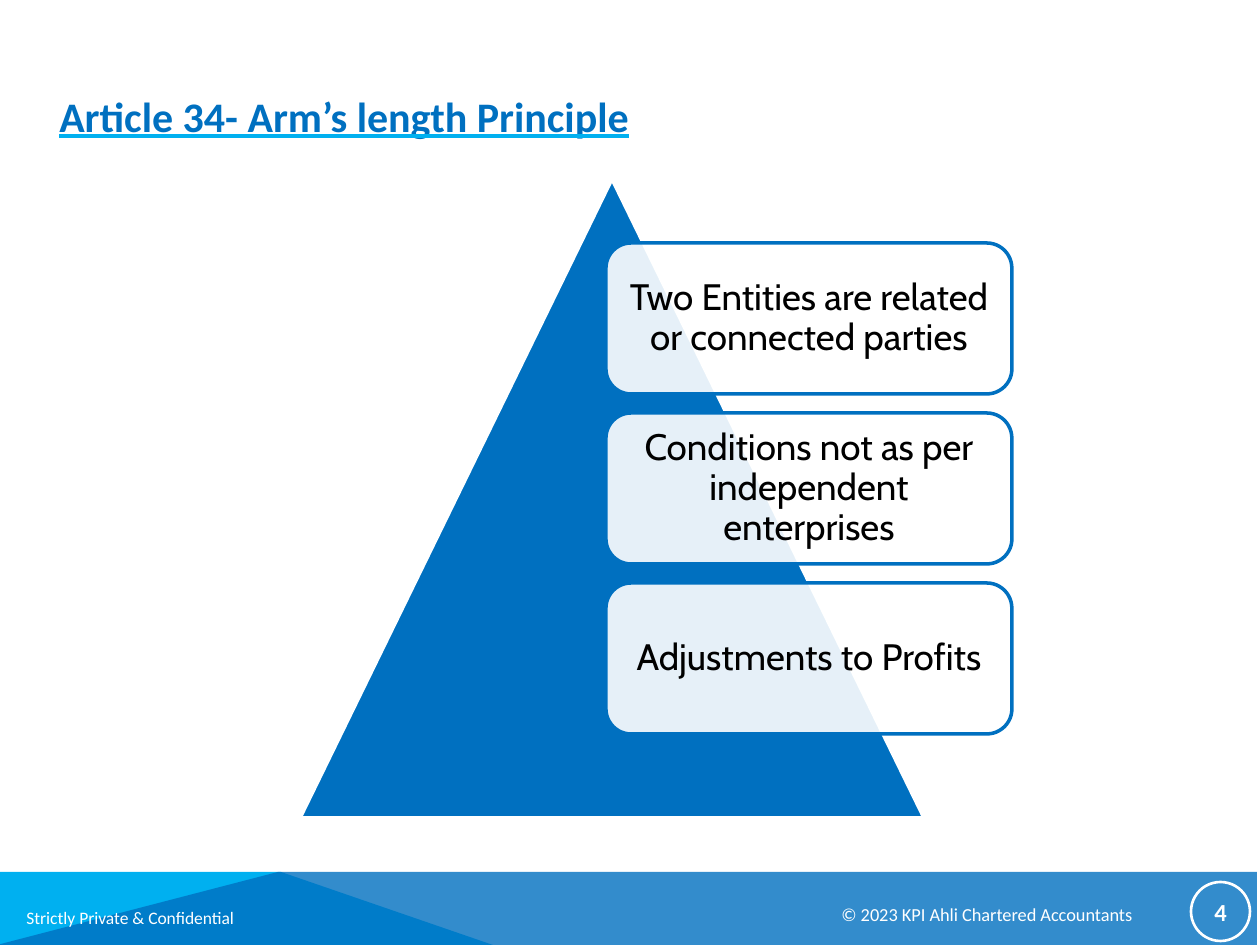
"""Build the slide on the arm's length principle."""
from lxml import etree
from pptx import Presentation
from pptx import util as u
from pptx.dml.color import RGBColor
from pptx.enum import shapes, text
from pptx.oxml.ns import qn

PX = u.Inches(1) / 126
BLUE = RGBColor(0x00, 0x70, 0xC0)
SKY = RGBColor(0x00, 0xB0, 0xF0)
WHITE = RGBColor(0xFF, 0xFF, 0xFF)
BLACK = RGBColor(0x00, 0x00, 0x00)

CONDITIONS = (
    "Two Entities are related or connected parties",
    "Conditions not as per independent enterprises",
    "Adjustments to Profits",
)
CONDITION_FORMAT = {"name": "Cabin", "size": u.Pt(21)}
TITLE_FORMAT = {"name": "Calibri", "size": u.Pt(24), "bold": True, "underline": True}
NUMBER_FORMAT = {"name": "Calibri", "size": u.Pt(14), "bold": True}


def px(*lengths):
    return [u.Emu(round(length * PX)) for length in lengths]


def paint(shape, fill=None, opacity=100, line=None, width=2):
    shape.shadow.inherit = False
    if fill is None:
        shape.fill.background()
    else:
        shape.fill.solid()
        shape.fill.fore_color.rgb = fill
        if opacity < 100:
            color = shape.fill._xPr.find(qn("a:solidFill"))[0]
            etree.SubElement(color, qn("a:alpha"), val=str(opacity * 1000))
    if line is None:
        shape.line.fill.background()
    else:
        shape.line.color.rgb = line
        shape.line.width = u.Pt(width)


def write(shape, words, font_format, color, inset=None, **paragraph_format):
    frame = shape.text_frame
    frame.word_wrap = True
    if inset is not None:
        frame.vertical_anchor = text.MSO_ANCHOR.MIDDLE
        for side in ("left", "top", "right", "bottom"):
            setattr(frame, f"margin_{side}", px(inset)[0])
    paragraph = frame.paragraphs[0]
    for name, value in paragraph_format.items():
        setattr(paragraph, name, value)
    run = paragraph.add_run()
    run.text = words
    for name, value in font_format.items():
        setattr(run.font, name, value)
    run.font.color.rgb = color
    return run


def add_band(slide, points, fill, opacity=100):
    builder = slide.shapes.build_freeform(*points[0], scale=PX)
    builder.add_line_segments(points[1:], close=True)
    paint(builder.convert_to_shape(), fill, opacity)


def add_shape(slide, kind, box, **colors):
    shape = slide.shapes.add_shape(kind, *px(*box))
    paint(shape, **colors)
    return shape


def add_label(slide, box, words, font_format, color):
    label = slide.shapes.add_textbox(*px(*box))
    return label, write(label, words, font_format, color)


def add_title(slide):
    title, run = add_label(slide, (47, 84, 1144, 63),
                           "Article 34- Arm’s length Principle", TITLE_FORMAT, BLUE)
    title.text_frame.auto_size = text.MSO_AUTO_SIZE.SHAPE_TO_FIT_TEXT
    underline = etree.Element(qn("a:uFill"))
    solid = etree.SubElement(underline, qn("a:solidFill"))
    etree.SubElement(solid, qn("a:srgbClr"), val=str(SKY))
    run.font._element.find(qn("a:latin")).addprevious(underline)


def add_footer(slide):
    add_band(slide, [(0, 945), (0, 872), (281, 872), (493, 945)], SKY)
    add_band(slide, [(-3, 945), (278, 872), (1257, 872), (1257, 945)], BLUE, 80)
    for box, words, size in (
        ((829, 897, 399, 42), "© 2023 KPI Ahli Chartered Accountants", 10.5),
        ((14, 901, 252, 38), "Strictly Private & Confidential", 10),
    ):
        add_label(slide, box, words, {"name": "Calibri", "size": u.Pt(size)}, WHITE)


def add_page_number(slide):
    circle = add_shape(slide, shapes.MSO_SHAPE.OVAL, (1191, 882, 59, 59),
                       line=WHITE, width=1.5)
    write(circle, "4", NUMBER_FORMAT, WHITE, inset=1, alignment=text.PP_ALIGN.CENTER)


def add_pyramid(slide):
    add_shape(slide, shapes.MSO_SHAPE.ISOSCELES_TRIANGLE, (300, 179, 624, 639),
              fill=BLUE, line=WHITE)
    for row, words in enumerate(CONDITIONS):
        card = add_shape(slide, shapes.MSO_SHAPE.ROUNDED_RECTANGLE,
                         (606, 243 + 170 * row, 406, 151),
                         fill=WHITE, opacity=90, line=BLUE)
        write(card, words, CONDITION_FORMAT, BLACK, inset=11,
              alignment=text.PP_ALIGN.CENTER, line_spacing=0.9)


def main():
    presentation = Presentation()
    presentation.slide_width, presentation.slide_height = px(1260, 945)
    slide = presentation.slides.add_slide(presentation.slide_layouts[6])
    add_footer(slide)
    add_title(slide)
    add_page_number(slide)
    add_pyramid(slide)
    presentation.save("out.pptx")


if __name__ == "__main__":
    main()
